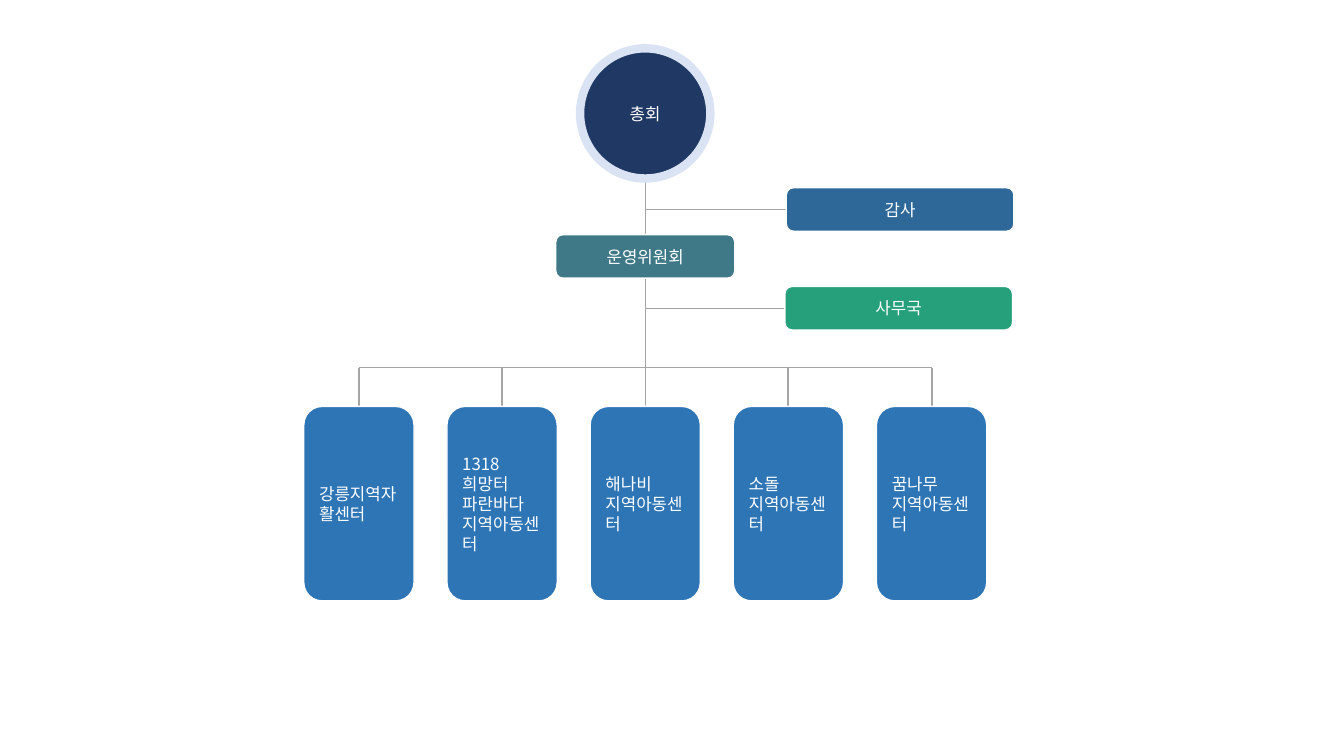
from dataclasses import dataclass
from typing import Optional

from lxml.etree import SubElement
from pptx import Presentation
from pptx.dml.color import RGBColor
from pptx.enum.shapes import MSO_CONNECTOR, MSO_SHAPE
from pptx.enum.text import MSO_ANCHOR, PP_ALIGN
from pptx.oxml.ns import qn
from pptx.util import Inches, Pt

FONT = "Noto Sans CJK KR"
COLORS = {
    "assembly": "203864", "ring": "DAE3F3", "audit": "2D6899",
    "committee": "3F7987", "office": "26A07A", "branch": "2E75B6",
    "line": "A5A5A5", "white": "FFFFFF",
}

# Grid: one column per branch, rows of equal height
GRID_LEFT, COL, ROW = 3.02, 1.42, 0.48
AXIS = 2.38       # centre column of the chart
BAR_ROW = 7.6     # horizontal line above the branches
BRANCH_ROW = 8.4  # top of the branches
TOP, LEFT, BOTTOM = 0, 1, 2


@dataclass
class Node:
    text: str
    color: str
    center: float  # columns
    top: float     # rows
    width: float   # columns
    height: float  # rows
    preset: MSO_SHAPE = MSO_SHAPE.ROUNDED_RECTANGLE
    align: PP_ALIGN = PP_ALIGN.CENTER
    border: str = "white"
    border_pt: float = 1


@dataclass
class Link:
    start: tuple  # column, row
    end: tuple
    weight: float = 1
    begin_node: Optional[str] = None  # joined at its bottom
    end_node: Optional[str] = None
    end_site: int = TOP


def x(col: float) -> int:
    return Inches(GRID_LEFT + COL * col)


def y(row: float) -> int:
    return Inches(ROW * row)


def rgb(name: str) -> RGBColor:
    return RGBColor.from_string(COLORS[name])


def draw_node(slide, node: Node):
    sp = slide.shapes.add_shape(
        node.preset, x(node.center - node.width / 2), y(node.top),
        Inches(COL * node.width), Inches(ROW * node.height))
    sp.shadow.inherit = False
    sp.fill.solid()
    sp.fill.fore_color.rgb = rgb(node.color)
    sp.line.color.rgb = rgb(node.border)
    sp.line.width = Pt(node.border_pt)
    tf = sp.text_frame
    tf.word_wrap = True
    tf.vertical_anchor = MSO_ANCHOR.MIDDLE
    tf.text = node.text
    for p in tf.paragraphs:
        p.alignment = node.align
        for r in p.runs:
            r.font.name, r.font.size = FONT, Pt(12)
            r.font.color.rgb = rgb("white")
            SubElement(r.font._element, qn("a:ea")).set("typeface", FONT)
    return sp


def draw_link(slide, link: Link, shapes: dict) -> None:
    cxn = slide.shapes.add_connector(
        MSO_CONNECTOR.STRAIGHT, x(link.start[0]), y(link.start[1]),
        x(link.end[0]), y(link.end[1]))
    if link.begin_node:
        cxn.begin_connect(shapes[link.begin_node], BOTTOM)
    if link.end_node:
        cxn.end_connect(shapes[link.end_node], link.end_site)
    cxn.line.color.rgb = rgb("line")
    cxn.line.width = Pt(link.weight)
    SubElement(cxn._element.spPr, qn("a:effectLst"))
    # Lines lie behind the boxes
    slide.shapes._spTree.insert(2, cxn._element)


BRANCHES = [
    "강릉지역자활센터",
    "1318\n희망터\n파란바다\n지역아동센터",
    "해나비\n지역아동센터",
    "소돌\n지역아동센터",
    "꿈나무\n지역아동센터",
]

NODES = [
    Node("총회", "assembly", AXIS, 1, 0.91, 2.69, MSO_SHAPE.OVAL,
         border="ring", border_pt=6),
    Node("감사", "audit", 4.16, 3.88, 1.59, 0.9),
    Node("운영위원회", "committee", AXIS, 4.85, 1.25, 0.9),
    Node("사무국", "office", 4.15, 5.92, 1.59, 0.9),
] + [
    Node(text, "branch", i + 0.38, BRANCH_ROW, 0.77, 4.02,
         align=PP_ALIGN.LEFT)
    for i, text in enumerate(BRANCHES)
]

LINKS = [
    Link((AXIS, 3.69), (AXIS, 4.85), end_node="운영위원회"),
    Link((AXIS, 5.75), (AXIS, BRANCH_ROW), begin_node="운영위원회",
         end_node=BRANCHES[2]),
    Link((AXIS, 4.33), (3.37, 4.33), end_node="감사", end_site=LEFT),
    Link((AXIS, 6.37), (3.36, 6.37), end_node="사무국", end_site=LEFT),
    Link((0.38, BAR_ROW), (4.38, BAR_ROW)),
] + [
    Link((i + 0.38, BAR_ROW), (i + 0.38, BRANCH_ROW), 1.5, end_node=text)
    for i, text in enumerate(BRANCHES) if i != 2
]


def main() -> None:
    prs = Presentation()
    prs.slide_width, prs.slide_height = Inches(13.33), Inches(7.5)
    slide = prs.slides.add_slide(prs.slide_layouts[6])
    # Boxes first, so that the lines can be joined to them
    shapes = {node.text: draw_node(slide, node) for node in NODES}
    for link in LINKS:
        draw_link(slide, link, shapes)
    prs.save("out.pptx")


if __name__ == "__main__":
    main()
